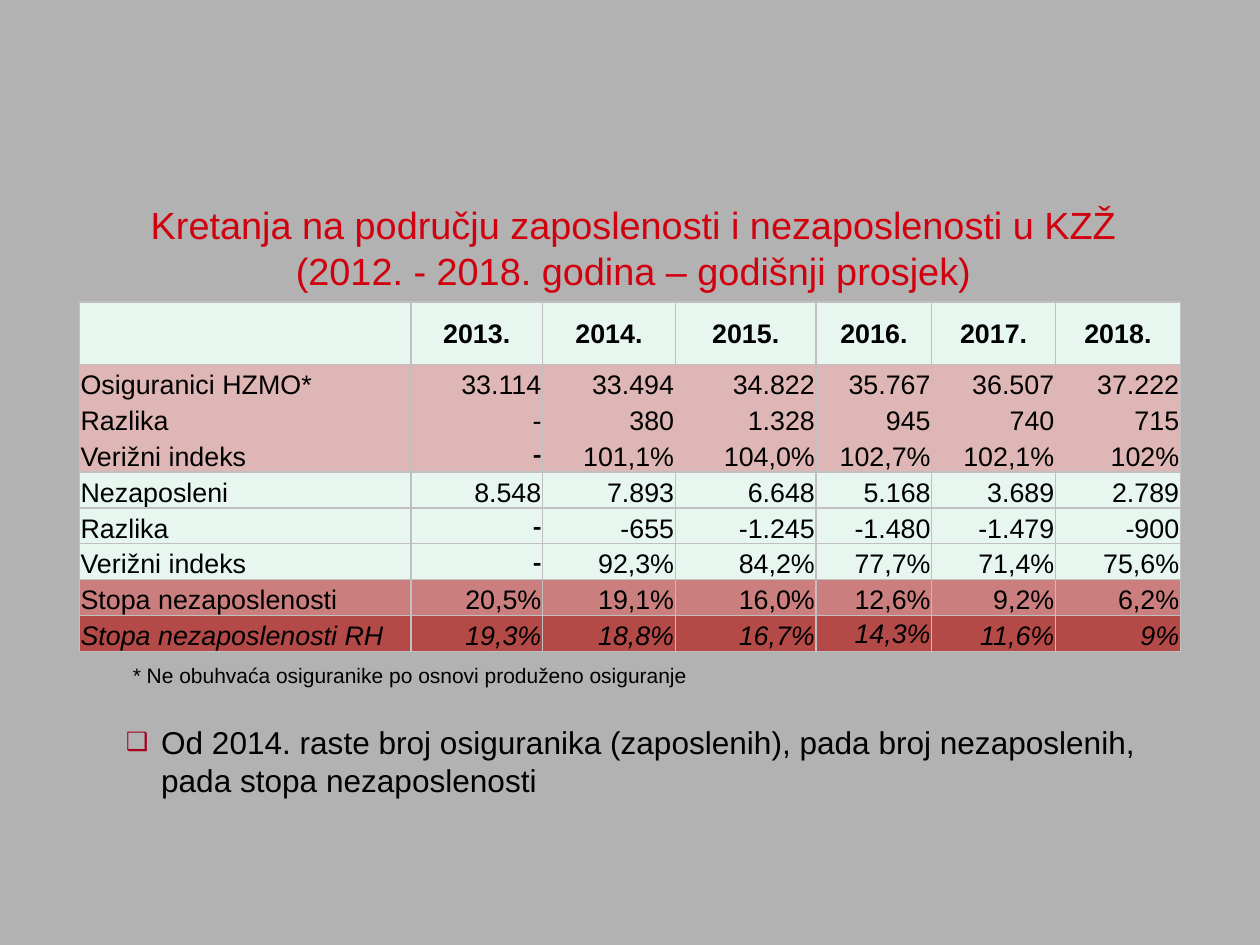
from pptx import Presentation
from pptx.dml.color import RGBColor
from pptx.enum.text import MSO_ANCHOR, PP_ALIGN
from pptx.oxml import parse_xml
from pptx.oxml.ns import nsdecls
from pptx.util import Inches, Pt

MINT, PINK, ROSE, BRICK = "E7F6EF", "DDB6B5", "CA7E7D", "B34A47"
COL_WIDTHS = [2.92, 1.16, 1.17, 1.24, 1.02, 1.09, 1.1]
YEARS = ["", "2013.", "2014.", "2015.", "2016.", "2017.", "2018."]
ROWS = [
    (MINT, YEARS),
    (PINK, ["Osiguranici HZMO*", "33.114", "33.494", "34.822", "35.767", "36.507", "37.222"]),
    (PINK, ["Razlika", "-", "380", "1.328", "945", "740", "715"]),
    (PINK, ["Verižni indeks", "-", "101,1%", "104,0%", "102,7%", "102,1%", "102%"]),
    (MINT, ["Nezaposleni", "8.548", "7.893", "6.648", "5.168", "3.689", "2.789"]),
    (MINT, ["Razlika", "-", "-655", "-1.245", "-1.480", "-1.479", "-900"]),
    (MINT, ["Verižni indeks", "-", "92,3%", "84,2%", "77,7%", "71,4%", "75,6%"]),
    (ROSE, ["Stopa nezaposlenosti", "20,5%", "19,1%", "16,0%", "12,6%", "9,2%", "6,2%"]),
    (BRICK, ["Stopa nezaposlenosti RH", "19,3%", "18,8%", "16,7%", "14,3%", "11,6%", "9%"]),
]


def rgb(color):
    """Turn a hex string into a colour."""
    return RGBColor.from_string(color)


def write(tf, text, size=17, color="000000", font="Arial", bold=False, italic=False,
          align=PP_ALIGN.LEFT):
    """Write formatted text into the first paragraph of a frame."""
    p = tf.paragraphs[0]
    p.alignment = align
    r = p.add_run()
    r.text = text
    r.font.name, r.font.size = font, Pt(size)
    r.font.bold, r.font.italic = bold, italic
    r.font.color.rgb = rgb(color)
    return p


def add_text(slide, box, text, **fmt):
    """Place a wrapped text box and return its paragraph."""
    tf = slide.shapes.add_textbox(*map(Inches, box)).text_frame
    tf.word_wrap = True
    tf.margin_left = tf.margin_right = Inches(0.08)
    tf.margin_top = tf.margin_bottom = Inches(0.04)
    return write(tf, text, **fmt)


def add_bullet(slide, box, text, **fmt):
    """Place one paragraph with a hanging square bullet."""
    p = add_text(slide, box, text, **fmt)
    pPr = p._p.get_or_add_pPr()
    pPr.set("marL", str(Inches(0.31)))
    pPr.set("indent", str(-Inches(0.31)))
    for xml in (f'<a:buClr {nsdecls("a")}><a:srgbClr val="A50021"/></a:buClr>',
                f'<a:buSzPct {nsdecls("a")} val="80000"/>',
                f'<a:buFont {nsdecls("a")} typeface="Arial"/>',
                f'<a:buChar {nsdecls("a")} char="❑"/>'):
        pPr.append(parse_xml(xml))


def set_borders(cell, hidden):
    """Draw grey cell borders, leaving out the hidden sides."""
    tcPr = cell._tc.get_or_add_tcPr()
    for side in "LRTB":
        paint = ("<a:noFill/>" if side in hidden else
                 '<a:solidFill><a:srgbClr val="C0C0C0"/></a:solidFill>')
        tcPr.append(parse_xml(
            f'<a:ln{side} {nsdecls("a")} w="12700">{paint}</a:ln{side}>'))


def fill_cell(cell, row, col, text, fill):
    """Style one cell according to its row and column."""
    hidden = ("T" if row in (2, 3) else "") + ("B" if row in (1, 2) else "")
    set_borders(cell, hidden)
    cell.fill.solid()
    cell.fill.fore_color.rgb = rgb(fill)
    cell.margin_left = cell.margin_right = cell.margin_top = Inches(0.01)
    cell.margin_bottom = 0
    middle = row == 0 or (row, col) == (8, 4)
    cell.vertical_anchor = MSO_ANCHOR.MIDDLE if middle else MSO_ANCHOR.BOTTOM
    if not text:
        return
    calibri_dash = text == "-" and row > 2
    align = PP_ALIGN.CENTER if row == 0 else PP_ALIGN.RIGHT if col else PP_ALIGN.LEFT
    write(cell.text_frame, text, font="Calibri" if calibri_dash else "Arial",
          bold=row == 0 or calibri_dash, italic=row == 8, align=align)


def add_employment_table(slide, box, header=0.55):
    """Place the employment table in the given box."""
    frame = slide.shapes.add_table(len(ROWS), len(YEARS), *map(Inches, box))
    table = frame.table
    table.horz_banding = table.first_row = False
    for column, width in zip(table.columns, COL_WIDTHS):
        column.width = Inches(width)
    body = (box[3] - header) / (len(ROWS) - 1)
    for i, (fill, texts) in enumerate(ROWS):
        table.rows[i].height = Inches(body if i else header)
        for j, text in enumerate(texts):
            fill_cell(table.cell(i, j), i, j, text, fill)


def main():
    """Build and save the slide."""
    prs = Presentation()
    prs.slide_width = Inches(11.1)
    prs.slide_height = prs.slide_width * 3 // 4
    slide = prs.slides.add_slide(prs.slide_layouts[6])
    slide.background.fill.solid()
    slide.background.fill.fore_color.rgb = rgb("B2B2B2")
    add_text(slide, (1.22, 1.74, 8.72, 0.66),
             "Kretanja na području zaposlenosti i nezaposlenosti u KZŽ "
             "(2012. - 2018. godina – godišnji prosjek)",
             size=24, color="D1000E", align=PP_ALIGN.CENTER)
    add_bullet(slide, (1.03, 6.33, 9.18, 0.8),
               "Od 2014. raste broj osiguranika (zaposlenih), pada broj "
               "nezaposlenih, pada stopa nezaposlenosti", size=20)
    add_employment_table(slide, (0.7, 2.66, 9.7, 3.08))
    add_text(slide, (1.09, 5.8, 7.74, 0.4),
             "* Ne obuhvaća osiguranike po osnovi produženo osiguranje", size=13.3)
    prs.save("out.pptx")


if __name__ == "__main__":
    main()
